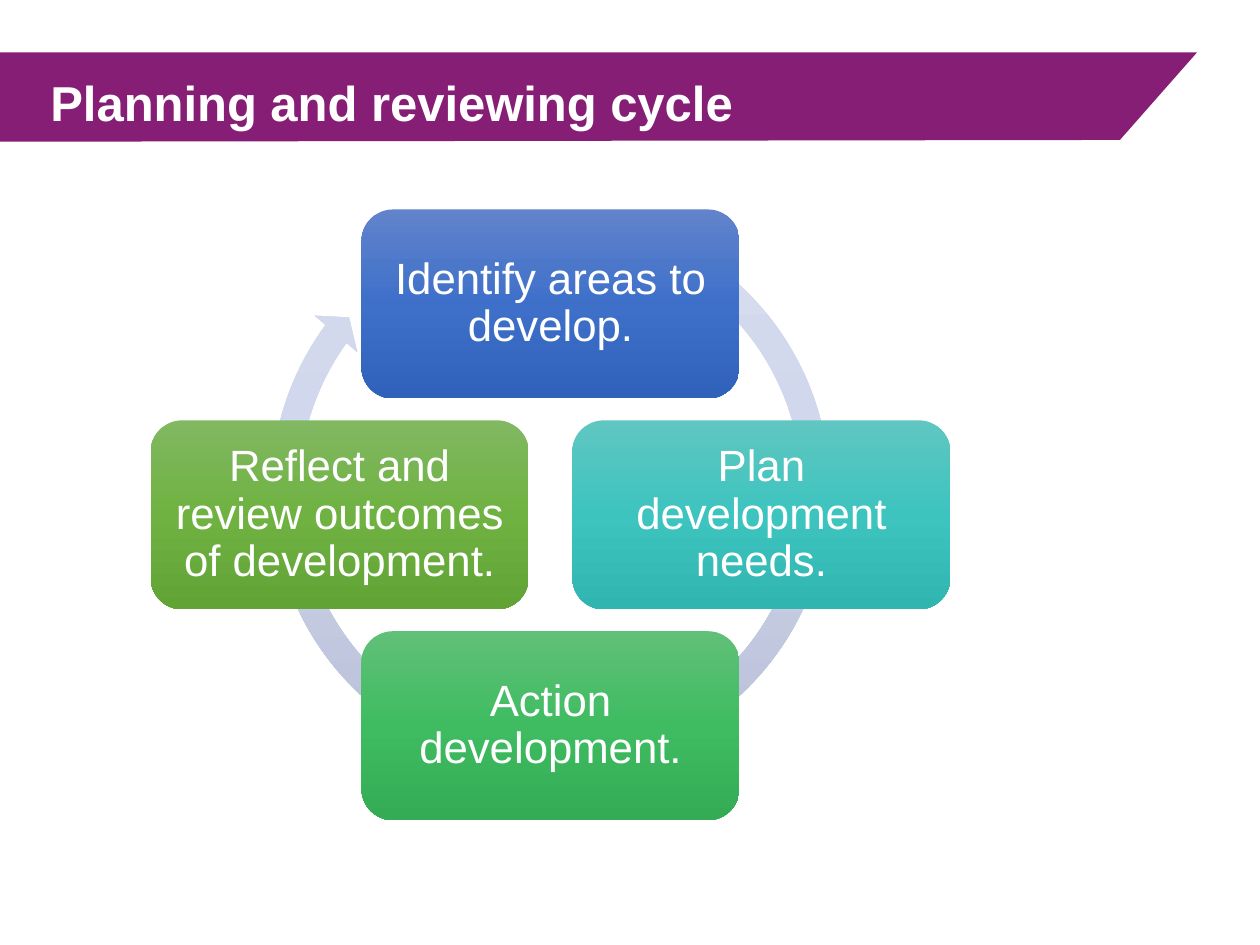
"""Build the planning and reviewing cycle slide."""
from copy import deepcopy

from pptx import Presentation
from pptx.dml.color import RGBColor
from pptx.enum.shapes import MSO_SHAPE as Shape
from pptx.enum.text import MSO_ANCHOR as Anchor, PP_ALIGN as Align
from pptx.util import Pt

WHITE = RGBColor(0xFF, 0xFF, 0xFF)
PURPLE = RGBColor(0x87, 0x1E, 0x76)


def gradient(*codes):
    """Return gradient colours from hex codes."""
    return [RGBColor.from_string(code) for code in codes]


ARROW = gradient("D8DDEE", "CED5EB", "B5BCD3")
BLUE = gradient("6183CB", "3E70CA", "3062BB")
TEAL = gradient("60C6C1", "3DC4BF", "30B5B0")
GREEN = gradient("60C077", "3FBC62", "33AC55")
LIME = gradient("81B861", "6FB242", "62A336")

CENTER_X, CENTER_Y, RADIUS = 314.6, 294.2, 120.5
STEP_WIDTH, STEP_HEIGHT = 216, 108
ARROW_SIZE, ARROW_TOP = 335.5, 112.4
ARROW_ADJUSTMENTS = (0.047, 2.729, 129.637, 179.413, 0.048)
BANNER_POINTS = [(0, 29.5), (684, 29.5), (640, 79.8), (0, 80.8)]
STEPS = [
    ("Identify areas to develop.", BLUE, 0, -1),
    ("Plan development needs.", TEAL, 1, 0),
    ("Action development.", GREEN, 0, 1),
    ("Reflect and review outcomes of development.", LIME, -1, 0),
]


def write_text(shape, text, size, bold=False, align=Align.LEFT, inset=(7.2, 3.6)):
    """Put one formatted paragraph in a shape."""
    frame = shape.text_frame
    frame.word_wrap = True
    frame.vertical_anchor = Anchor.MIDDLE
    frame.margin_left = frame.margin_right = Pt(inset[0])
    frame.margin_top = frame.margin_bottom = Pt(inset[1])
    paragraph = frame.paragraphs[0]
    paragraph.alignment = align
    paragraph.line_spacing = 0.9
    paragraph.space_before = Pt(0)
    run = paragraph.add_run()
    run.text = text
    run.font.name = "Arial"
    run.font.size = Pt(size)
    run.font.bold = bold
    run.font.color.rgb = WHITE


def fill_gradient(shape, colors):
    """Fill a shape with evenly spaced colours from top to bottom."""
    fill = shape.fill
    fill.gradient()
    fill.gradient_angle = 270
    stop_list = shape._element.spPr.find(".//{*}gsLst")
    for _ in colors[2:]:
        stop_list.append(deepcopy(stop_list[-1]))
    for index, (stop, color) in enumerate(zip(fill.gradient_stops, colors)):
        stop.color.rgb = color
        stop.position = index / (len(colors) - 1)


def add_gradient_shape(slide, kind, left, top, width, height, colors):
    """Add a borderless preset shape with a gradient."""
    shape = slide.shapes.add_shape(kind, Pt(left), Pt(top), Pt(width), Pt(height))
    shape.shadow.inherit = False
    shape.line.fill.background()
    fill_gradient(shape, colors)
    return shape


def add_banner(slide):
    """Add the slanted banner behind the title."""
    builder = slide.shapes.build_freeform(*BANNER_POINTS[0], scale=Pt(1))
    builder.add_line_segments(BANNER_POINTS[1:], close=True)
    banner = builder.convert_to_shape()
    banner.shadow.inherit = False
    banner.fill.solid()
    banner.fill.fore_color.rgb = PURPLE
    banner.line.fill.background()
    slide.shapes._spTree.insert(2, banner._element)


def add_title(slide, text):
    """Place and format the title."""
    title = slide.shapes.title
    title.left, title.top = Pt(21.6), Pt(40.5)
    title.width, title.height = Pt(586.8), Pt(39.6)
    write_text(title, text, 28, bold=True)


def add_arrow(slide):
    """Add the circular arrow behind the steps."""
    arrow = add_gradient_shape(slide, Shape.CIRCULAR_ARROW, CENTER_X - ARROW_SIZE / 2,
                               ARROW_TOP, ARROW_SIZE, ARROW_SIZE, ARROW)
    for index, value in enumerate(ARROW_ADJUSTMENTS):
        arrow.adjustments[index] = value


def add_step(slide, text, colors, across, down):
    """Add one step at its direction from the cycle centre."""
    left = CENTER_X + across * RADIUS - STEP_WIDTH / 2
    top = CENTER_Y + down * RADIUS - STEP_HEIGHT / 2
    step = add_gradient_shape(slide, Shape.ROUNDED_RECTANGLE, left, top,
                              STEP_WIDTH, STEP_HEIGHT, colors)
    write_text(step, text, 25, align=Align.CENTER, inset=(7.2, 7.2))


def main():
    """Build and save the presentation."""
    presentation = Presentation()
    presentation.slide_width, presentation.slide_height = Pt(720), Pt(540)
    slide = presentation.slides.add_slide(presentation.slide_layouts[5])
    add_banner(slide)
    add_title(slide, "Planning and reviewing cycle")
    add_arrow(slide)
    for step in STEPS:
        add_step(slide, *step)
    presentation.save("out.pptx")


if __name__ == "__main__":
    main()
